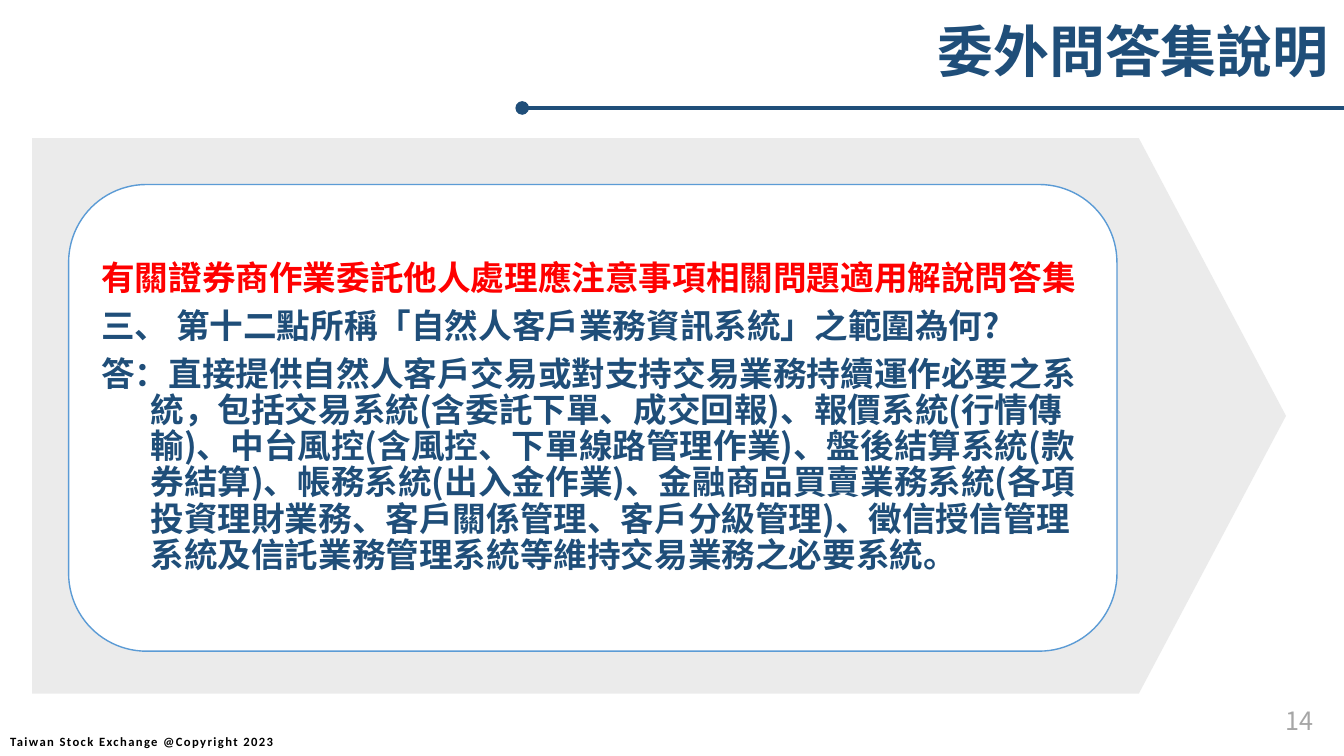
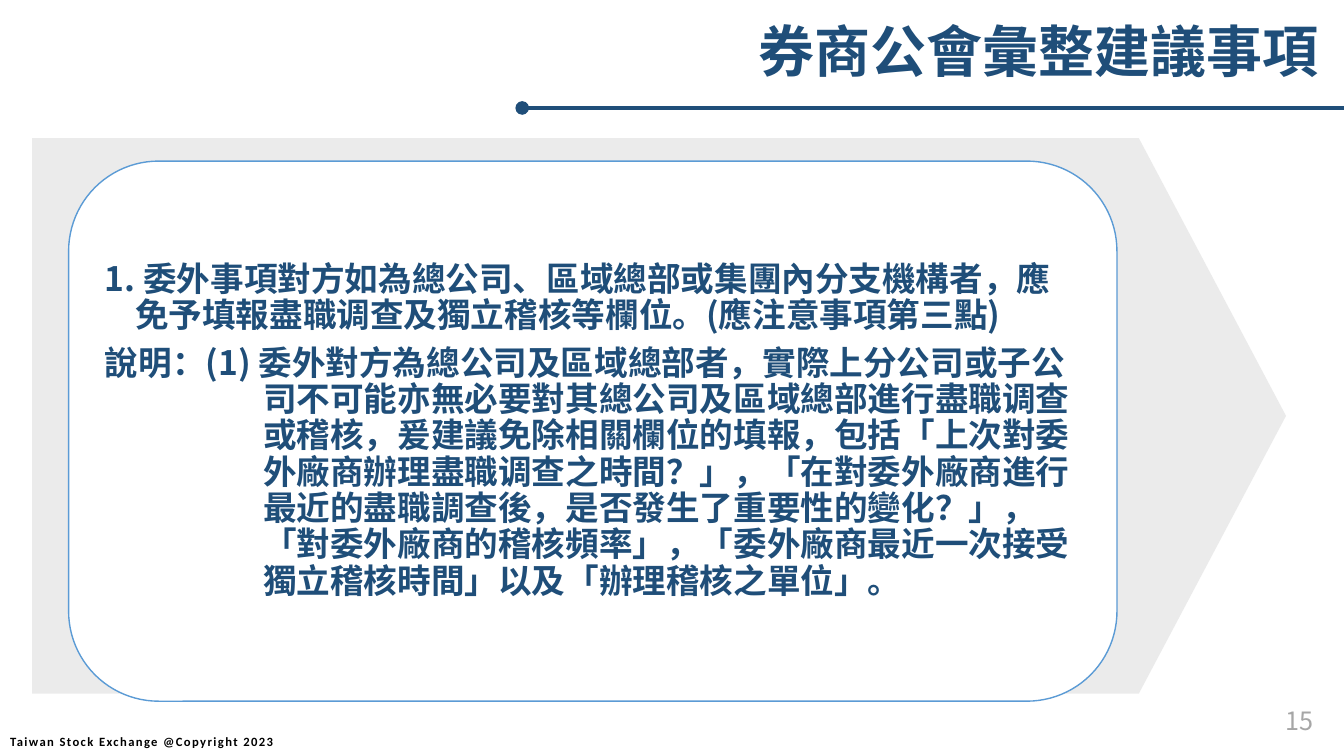
from dataclasses import dataclass

from pptx import Presentation
from pptx import util as u
from pptx.dml.color import RGBColor
from pptx.enum import shapes, text
from pptx.oxml.ns import qn
from lxml import etree


@dataclass(frozen=True)
class Theme:
    navy: str = "1F4E79"
    red: str = "FF0000"
    blue: str = "5B9BD5"
    band: str = "D9D9D9"
    grey: str = "A6A6A6"
    black: str = "000000"
    white: str = "FFFFFF"
    font: str = "Noto Sans CJK SC"
    footer_font: str = "Calibri"
    title_size: int = 40
    body_size: int = 24
    page_size: int = 18
    footer_size: int = 9


@dataclass(frozen=True)
class Para:
    text: str
    hanging: float = 0
    color: str = Theme.navy


@dataclass(frozen=True)
class Page:
    number: int
    title: str
    title_left: float
    card_top: float
    card_height: float
    paras: tuple[Para, ...]


T = Theme()
WIDTH, HEIGHT = 33.87, 19.05
FOOTER = "Taiwan Stock Exchange @Copyright 2023"

PAGES = (
    Page(14, "委外問答集說明", 23.37, 4.65, 11.76, (
        Para("有關證券商作業委託他人處理應注意事項相關問題適用解說問答集", color=T.red),
        Para("三、 第十二點所稱「自然人客戶業務資訊系統」之範圍為何?"),
        Para("答：直接提供自然人客戶交易或對支持交易業務持續運作必要之系統，"
             "包括交易系統(含委託下單、成交回報)、報價系統(行情傳輸)、"
             "中台風控(含風控、下單線路管理作業)、盤後結算系統(款券結算)、"
             "帳務系統(出入金作業)、金融商品買賣業務系統(各項投資理財業務、"
             "客戶關係管理、客戶分級管理)、徵信授信管理系統及信託業務管理系統等"
             "維持交易業務之必要系統。", 1.24),
    )),
    Page(15, "券商公會彙整建議事項", 18.87, 4.06, 13.61, (
        Para("1. 委外事項對方如為總公司、區域總部或集團內分支機構者，"
             "應免予填報盡職调查及獨立稽核等欄位。(應注意事項第三點)", 0.76),
        Para("說明：(1) 委外對方為總公司及區域總部者，實際上分公司或子公司不可能"
             "亦無必要對其總公司及區域總部進行盡職调查或稽核，爰建議免除相關欄位的填報，"
             "包括「上次對委外廠商辦理盡職调查之時間？」，「在對委外廠商進行最近的"
             "盡職調查後，是否發生了重要性的變化？」，「對委外廠商的稽核頻率」，"
             "「委外廠商最近一次接受獨立稽核時間」以及「辦理稽核之單位」。", 3.99),
    )),
)


def style(p, size: int, color: str, bold: bool = True, font: str = T.font,
          spacing: float = 0) -> None:
    """Set the paragraph font for Latin and East Asian text."""
    p.font.size, p.font.bold, p.font.name = u.Pt(size), bold, font
    p.font.color.rgb = RGBColor.from_string(color)
    props = p._p.pPr.find(qn("a:defRPr"))
    etree.SubElement(props, qn("a:ea")).set("typeface", font)
    if spacing:
        props.set("spc", str(round(spacing * 100)))


def add_label(s, box: tuple[float, float, float, float], content: str,
              align=text.PP_ALIGN.LEFT, anchor=text.MSO_ANCHOR.MIDDLE,
              wrap: bool = True, **font) -> None:
    """Add a one-line text box; box is left, top, width, height in cm."""
    tf = s.shapes.add_textbox(*map(u.Cm, box)).text_frame
    tf.word_wrap, tf.vertical_anchor = wrap, anchor
    p = tf.paragraphs[0]
    p.text, p.alignment = content, align
    style(p, **font)


def add_rule(s) -> None:
    """Draw the line under the title, with a dot at its left end."""
    y = u.Cm(2.72)
    line = s.shapes.add_connector(shapes.MSO_CONNECTOR.STRAIGHT,
                                  u.Cm(13.16), y, u.Cm(WIDTH), y)
    line.line.color.rgb = RGBColor.from_string(T.navy)
    line.line.width = u.Pt(3.25)
    etree.SubElement(line.line._get_or_add_ln(), qn("a:headEnd")).set("type", "oval")
    etree.SubElement(line._element.spPr, qn("a:effectLst"))


def add_filled(s, kind, box: tuple[float, float, float, float], color: str):
    sp = s.shapes.add_shape(kind, *map(u.Cm, box))
    sp.shadow.inherit = False
    sp.fill.solid()
    sp.fill.fore_color.rgb = RGBColor.from_string(color)
    return sp


def add_arrow_band(s) -> None:
    sp = add_filled(s, shapes.MSO_SHAPE.PENTAGON, (0.81, 3.48, 31.6, 14), T.band)
    sp.adjustments[0] = 0.265
    sp.line.fill.background()
    color = sp._element.spPr.find(qn("a:solidFill"))[0]
    etree.SubElement(color, qn("a:alpha")).set("val", "50000")


def add_card(s, page: Page) -> None:
    sp = add_filled(s, shapes.MSO_SHAPE.ROUNDED_RECTANGLE,
                    (1.73, page.card_top, 26.42, page.card_height), T.white)
    sp.line.color.rgb = RGBColor.from_string(T.blue)
    sp.line.width = u.Pt(1)
    tf = sp.text_frame
    tf.word_wrap, tf.vertical_anchor = True, text.MSO_ANCHOR.MIDDLE
    tf.margin_left = tf.margin_right = tf.margin_top = tf.margin_bottom = u.Cm(0.25)
    for i, para in enumerate(page.paras):
        p = tf.add_paragraph() if i else tf.paragraphs[0]
        p.text, p.alignment = para.text, text.PP_ALIGN.LEFT
        p.line_spacing, p.space_after = 0.9, u.Pt(8.4)
        indent = u.Cm(para.hanging)
        p._p.pPr.set("marL", str(indent))
        p._p.pPr.set("indent", str(-indent))
        style(p, T.body_size, para.color)


def add_page(prs, page: Page) -> None:
    s = prs.slides.add_slide(prs.slide_layouts[6])
    add_label(s, (0, 18.3, 7.14, 0.75), FOOTER, text.PP_ALIGN.CENTER, wrap=False,
              size=T.footer_size, color=T.black, font=T.footer_font, spacing=1)
    add_label(s, (page.title_left, 0.28, WIDTH - page.title_left, 1.96), page.title,
              anchor=text.MSO_ANCHOR.TOP, size=T.title_size, color=T.navy)
    add_rule(s)
    add_arrow_band(s)
    add_card(s, page)
    add_label(s, (25.73, 17.65, 7.62, 1.02), str(page.number), text.PP_ALIGN.RIGHT,
              size=T.page_size, color=T.grey, bold=False)


def main() -> None:
    prs = Presentation()
    prs.slide_width, prs.slide_height = u.Cm(WIDTH), u.Cm(HEIGHT)
    for page in PAGES:
        add_page(prs, page)
    prs.save("out.pptx")


if __name__ == "__main__":
    main()
